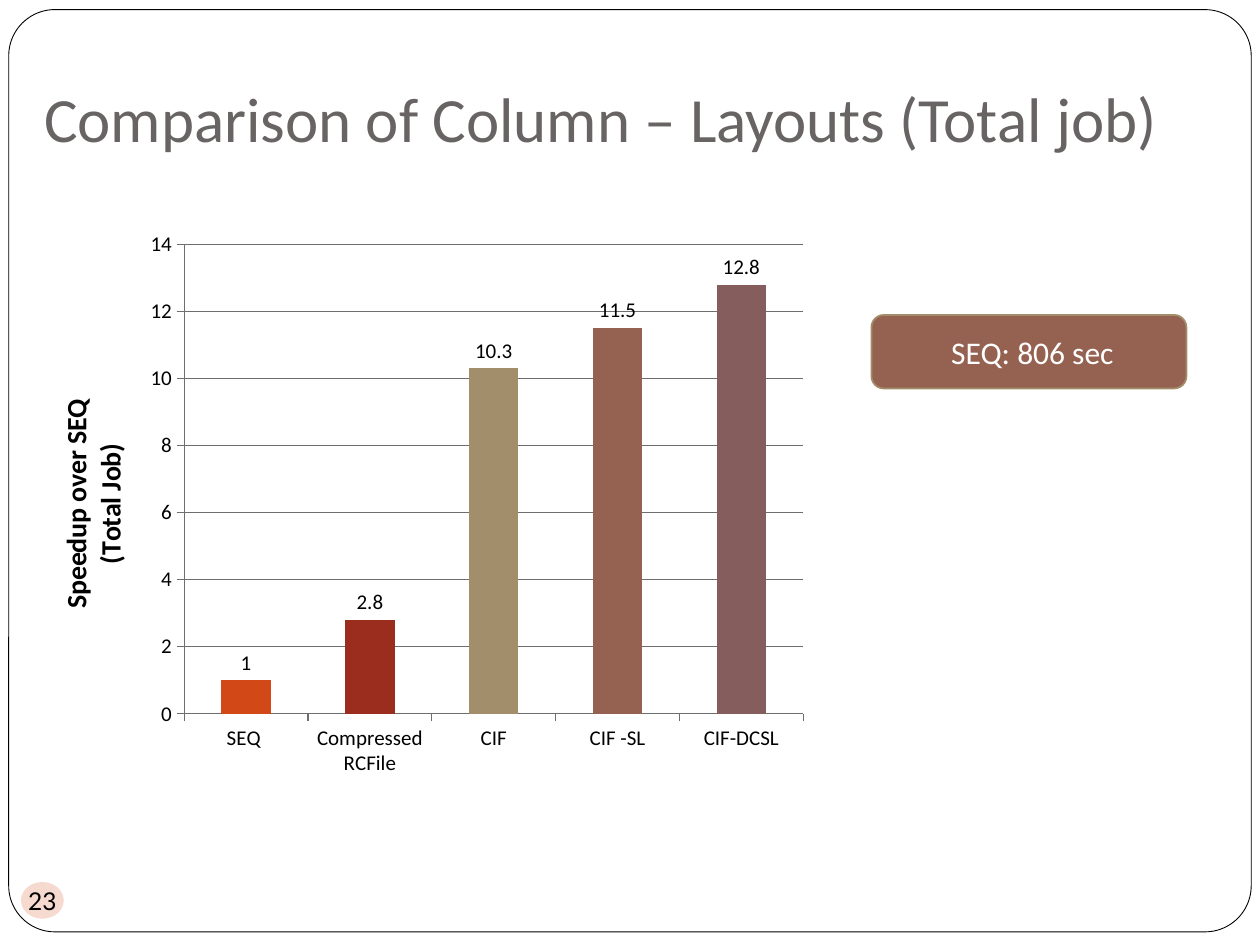
from lxml import etree
from pptx import Presentation, util as u
from pptx.chart import data
from pptx.dml import color
from pptx.enum import chart as charts, shapes, text
from pptx.oxml import ns

TITLE = "Comparison of Column – Layouts (Total job)"
AXIS_TITLE = ["Speedup over SEQ", "(Total Job)"]
BARS = [
    ("SEQ ", 1, "D34817"),
    ("Compressed RCFile", 2.8, "9B2D1F"),
    ("CIF", 10.3, "A28E6A"),
    ("CIF -SL", 11.5, "956251"),
    ("CIF-DCSL", 12.8, "855D5D"),
]
CALLOUT = " SEQ: 806 sec"
PAGE_NUMBER = "23"
GRID_COLOR = "6E6E6E"


def rgb(value):
    """Turn a hex string into a colour."""
    return color.RGBColor.from_string(value)


def points(*lengths):
    """Turn numbers into lengths in points."""
    return [u.Pt(length) for length in lengths]


def set_font(font, size, font_color="000000", name="Calibri", bold=False):
    """Format a font."""
    font.size, font.name, font.bold = u.Pt(size), name, bold
    font.color.rgb = rgb(font_color)


def write(frame, lines, align=None, **font_format):
    """Write lines as formatted paragraphs of a text frame."""
    for index, line in enumerate(lines):
        paragraph = frame.add_paragraph() if index else frame.paragraphs[0]
        paragraph.alignment = align
        run = paragraph.add_run()
        run.text = line
        set_font(run.font, **font_format)


def add_shape(slide, kind, box, fill, line=None, line_width=1):
    """Add a flat preset shape."""
    shape = slide.shapes.add_shape(kind, *points(*box))
    shape.shadow.inherit = False
    shape.fill.solid()
    shape.fill.fore_color.rgb = rgb(fill)
    if line:
        shape.line.color.rgb = rgb(line)
        shape.line.width = u.Pt(line_width)
    else:
        shape.line.fill.background()
    shape.text_frame.vertical_anchor = text.MSO_ANCHOR.MIDDLE
    return shape


def add_title(slide):
    """Fill and place the title placeholder."""
    title = slide.shapes.title
    title.left, title.top, title.width, title.height = points(18, 6, 666, 90)
    frame = title.text_frame
    frame.vertical_anchor = text.MSO_ANCHOR.BOTTOM
    frame.margin_bottom = u.Pt(7.2)
    frame.word_wrap = True
    write(frame, [TITLE], text.PP_ALIGN.LEFT, size=36, font_color="696464")
    return title


def add_speedup_chart(slide):
    """Add the column chart with one colour per bar."""
    chart_data = data.CategoryChartData()
    chart_data.categories = [name for name, _, _ in BARS]
    chart_data.add_series("Series 1", [value for _, value, _ in BARS])
    chart = slide.shapes.add_chart(
        charts.XL_CHART_TYPE.COLUMN_CLUSTERED, *points(18, 126, 450, 324), chart_data
    ).chart
    chart.has_legend = chart.has_title = False
    set_font(chart.font, 10)
    for axis in (chart.category_axis, chart.value_axis):
        set_font(axis.tick_labels.font, 12)
        axis.major_tick_mark = charts.XL_TICK_MARK.OUTSIDE
        axis.format.line.color.rgb = rgb(GRID_COLOR)
    value_axis = chart.value_axis
    value_axis.minimum_scale, value_axis.maximum_scale, value_axis.major_unit = 0, 14, 2
    value_axis.major_gridlines.format.line.color.rgb = rgb(GRID_COLOR)
    write(value_axis.axis_title.text_frame, AXIS_TITLE, size=16, bold=True)

    plot = chart.plots[0]
    plot.gap_width, plot.vary_by_categories = 150, False
    series = plot.series[0]
    series.format.fill.solid()
    series.format.fill.fore_color.rgb = rgb(BARS[0][2])
    for index, (_, _, bar_color) in enumerate(BARS):
        fill = series.points[index].format.fill
        fill.solid()
        fill.fore_color.rgb = rgb(bar_color)
    labels = series.data_labels
    labels.show_value = True
    labels.position = charts.XL_LABEL_POSITION.OUTSIDE_END
    set_font(labels.font, 12)


def add_page_number(slide):
    """Add the page number on a translucent oval."""
    badge = add_shape(slide, shapes.MSO_SHAPE.OVAL, (12, 504, 24.5, 21), "D34817")
    fill_color = badge.element.spPr.find(".//" + ns.qn("a:srgbClr"))
    etree.SubElement(fill_color, ns.qn("a:alpha"), val="20000")
    frame = badge.text_frame
    frame.margin_left = frame.margin_right = frame.margin_top = frame.margin_bottom = 0
    frame.word_wrap = False
    write(frame, [PAGE_NUMBER], text.PP_ALIGN.CENTER, size=14, name="Lato")


def main():
    """Build and save the slide."""
    presentation = Presentation()
    presentation.slide_width, presentation.slide_height = points(720, 540)
    slide = presentation.slides.add_slide(presentation.slide_layouts[5])
    title = add_title(slide)
    rounded = shapes.MSO_SHAPE.ROUNDED_RECTANGLE
    border = add_shape(slide, rounded, (5, 5.5, 710, 527), "FFFFFF", "000000", 0.5)
    border.adjustments[0] = 0.05
    title.element.addprevious(border.element)
    add_page_number(slide)
    add_speedup_chart(slide)
    callout = add_shape(slide, rounded, (498, 180, 180, 42), "956251", "A28E6A")
    write(callout.text_frame, [CALLOUT], text.PP_ALIGN.CENTER, size=18, font_color="FFFFFF")
    presentation.save("out.pptx")


if __name__ == "__main__":
    main()
